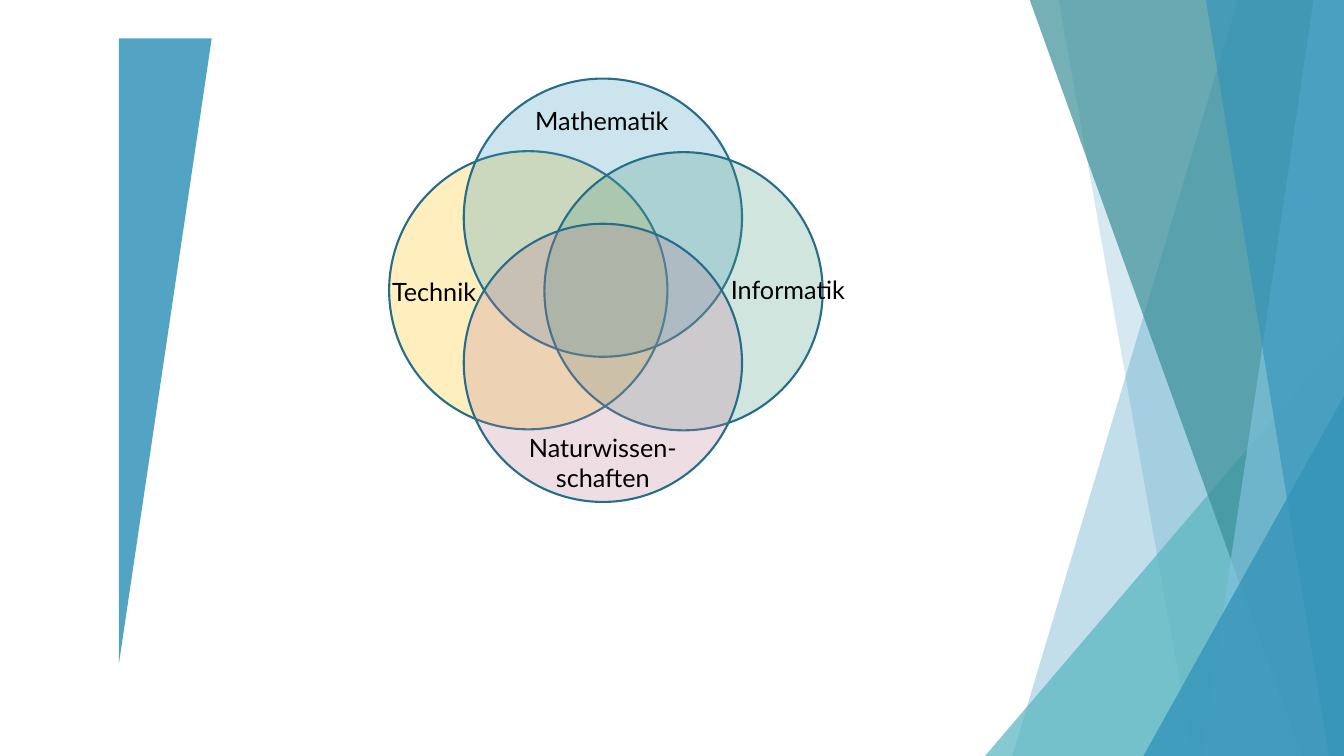
from lxml import etree
from pptx import Presentation
from pptx.dml.color import RGBColor
from pptx.enum.shapes import MSO_SHAPE
from pptx.enum.text import MSO_AUTO_SIZE, PP_ALIGN
from pptx.oxml.ns import qn
from pptx.util import Inches, Pt

OVAL, TRIANGLE = MSO_SHAPE.OVAL, MSO_SHAPE.ISOSCELES_TRIANGLE
LEFT, CENTER = PP_ALIGN.LEFT, PP_ALIGN.CENTER
FIT_SHAPE = MSO_AUTO_SIZE.SHAPE_TO_FIT_TEXT

BLUE = RGBColor(0x34, 0x94, 0xBA)
LIGHT_BLUE = RGBColor(0x7F, 0xC1, 0xDB)
DARK_BLUE = RGBColor(0x26, 0x6D, 0x8A)
AQUA = RGBColor(0x58, 0xB6, 0xC0)
TEAL = RGBColor(0x3A, 0x8F, 0x98)
GREEN = RGBColor(0x4A, 0x9B, 0x83)
YELLOW = RGBColor(0xFF, 0xC0, 0x00)
PINK = RGBColor(0xBE, 0x7C, 0x97)
BLACK = RGBColor(0, 0, 0)

SLIDE_W, SLIDE_H = 13.33, 7.5
FONT = "Lato"


def paint(shape, color, opacity):
    """Flat fill with the given opacity in percent, no outline."""
    shape.shadow.inherit = False
    shape.fill.solid()
    shape.fill.fore_color.rgb = color
    rgb = shape.fill._xPr.find(qn("a:solidFill"))[0]
    etree.SubElement(rgb, qn("a:alpha")).set("val", str(opacity * 1000))
    shape.line.fill.background()


def add_band(s, right, top, bottom, top_w, bottom_w, color, opacity):
    """Band along the right edge with a slanted left side."""
    points = [(right, top), (right, bottom), (right - bottom_w, bottom)]
    builder = s.shapes.build_freeform(Inches(right - top_w), Inches(top), 1)
    builder.add_line_segments([(Inches(x), Inches(y)) for x, y in points])
    paint(builder.convert_to_shape(), color, opacity)


def add_wedge(s, x, y, w, h, color, opacity, rotation=0):
    """Right-angled triangle, upright side on the right."""
    shape = s.shapes.add_shape(TRIANGLE, Inches(x), Inches(y), Inches(w), Inches(h))
    shape.adjustments[0] = 1
    shape.rotation = rotation
    paint(shape, color, opacity)


def add_facets(s, right, top, bottom):
    """Overlapping decoration on the right, from back to front."""
    def band(*style):
        add_band(s, right, top, bottom, *style)

    def wedge(w, h, color, opacity):
        add_wedge(s, right - w, bottom - h, w, h, color, opacity)

    band(1.05, 3.29, BLUE, 30)
    band(2.83, 1.5, BLUE, 20)
    wedge(3.56, 4.17, AQUA, 72)
    band(3.12, 0.42, TEAL, 70)
    band(0.3, 1.41, LIGHT_BLUE, 70)
    band(1.37, 0.15, BLUE, 65)
    wedge(1.99, 3.57, BLUE, 80)


def add_label(s, x, y, w, h, text, align=LEFT, wrap=False):
    tf = s.shapes.add_textbox(Inches(x), Inches(y), Inches(w), Inches(h)).text_frame
    tf.word_wrap = wrap
    tf.auto_size = FIT_SHAPE
    p = tf.paragraphs[0]
    p.text = text
    p.alignment = align
    p.font.name = FONT
    p.font.size = Pt(18)
    p.font.color.rgb = BLACK


def add_venn(s, x, y, size):
    """Four overlapping circles with their labels."""
    circles = [(0, 0.72, YELLOW), (0.74, 0, BLUE), (1.54, 0.73, GREEN), (0.74, 1.44, PINK)]
    for dx, dy, color in circles:
        circle = s.shapes.add_shape(OVAL, Inches(x + dx), Inches(y + dy),
                                    Inches(size), Inches(size))
        paint(circle, color, 25)
        circle.line.color.rgb = DARK_BLUE
        circle.line.width = Pt(1.5)

    add_label(s, x + 1.35, y + 0.22, 1.53, 0.4, "Mathematik")
    add_label(s, x + 3.29, y + 1.89, 1.38, 0.4, "Informatik")
    add_label(s, x + 0.89, y + 3.46, 2.46, 0.71, "Naturwissen- schaften", CENTER, True)
    add_label(s, x - 0.07, y + 1.91, 1.06, 0.4, "Technik")


def main():
    prs = Presentation()
    prs.slide_width, prs.slide_height = Inches(SLIDE_W), Inches(SLIDE_H)
    s = prs.slides.add_slide(prs.slide_layouts[6])
    add_facets(s, SLIDE_W, -0.01, SLIDE_H)
    # Wedge on the left, pointing down
    add_wedge(s, 1.18, 0.38, 0.92, 6.2, BLUE, 85, rotation=180)
    add_venn(s, 3.86, 0.78, 2.76)
    prs.save("out.pptx")


if __name__ == "__main__":
    main()
